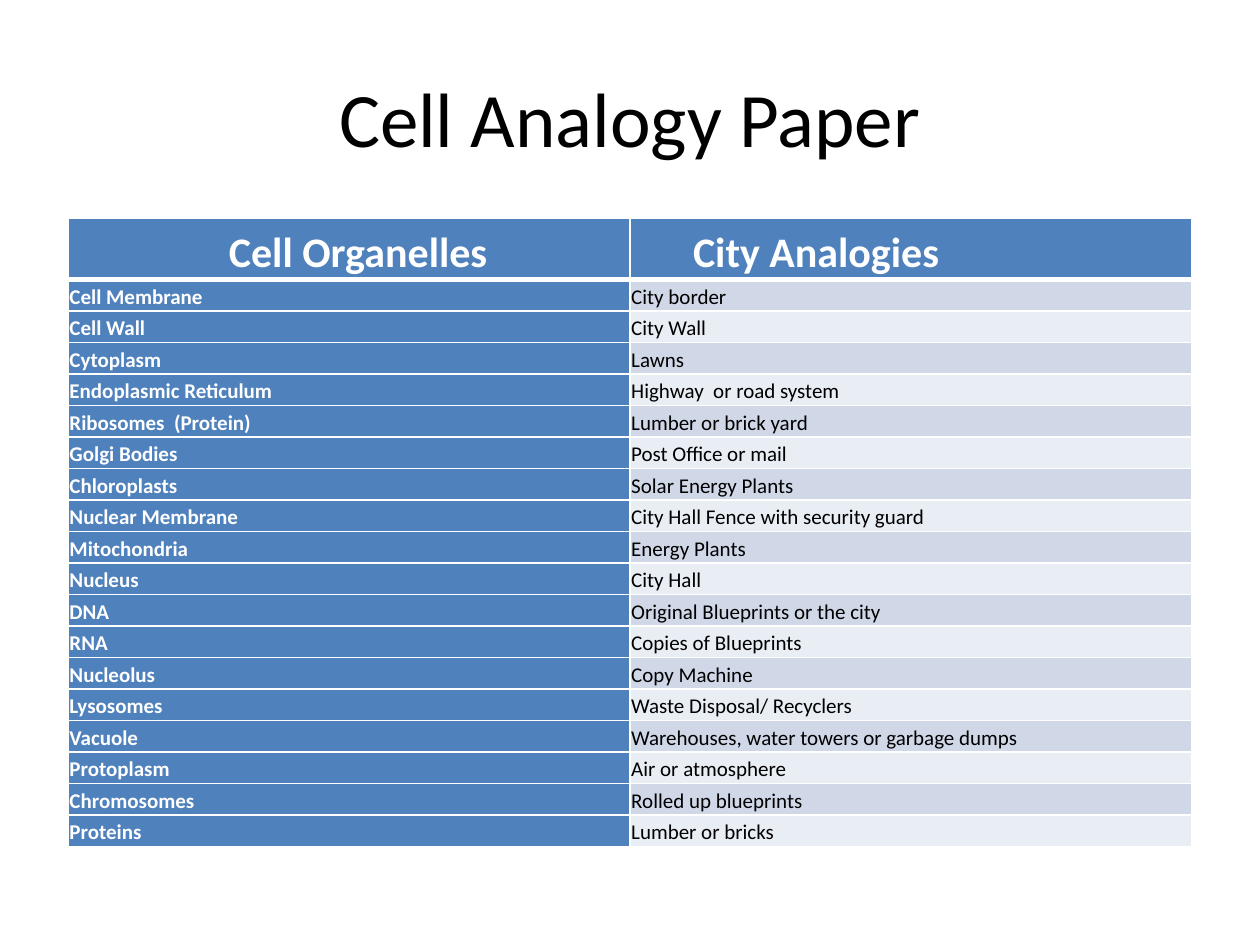
import dataclasses

import lxml.etree
import pptx
import pptx.dml.color
import pptx.enum.text
import pptx.oxml.ns
import pptx.util

Pt = pptx.util.Pt
Align = pptx.enum.text.PP_ALIGN
MIDDLE = pptx.enum.text.MSO_ANCHOR.MIDDLE


@dataclasses.dataclass(frozen=True)
class Theme:
    font: str = "Calibri"
    title_size: float = 44
    header_size: float = 24
    body_size: float = 12
    ink: str = "000000"
    paper: str = "FFFFFF"
    accent: str = "4F81BD"
    bands: tuple = ("D0D8E8", "E9EDF4")
    rule: float = 1
    heavy_rule: float = 3


HEADERS = [
    ("Cell Organelles", {"alignment": Align.CENTER, "space_after": Pt(10)}, 11),
    ("City Analogies", {"alignment": Align.LEFT}, 36),
]
ANALOGIES = [
    ("Cell Membrane", "City border"),
    ("Cell Wall", "City Wall"),
    ("Cytoplasm", "Lawns"),
    ("Endoplasmic Reticulum", "Highway  or road system"),
    ("Ribosomes  (Protein)", "Lumber or brick yard"),
    ("Golgi Bodies", "Post Office or mail"),
    ("Chloroplasts", "Solar Energy Plants"),
    ("Nuclear Membrane", "City Hall Fence with security guard"),
    ("Mitochondria", "Energy Plants"),
    ("Nucleus", "City Hall"),
    ("DNA", "Original Blueprints or the city"),
    ("RNA", "Copies of Blueprints"),
    ("Nucleolus", "Copy Machine"),
    ("Lysosomes", "Waste Disposal/ Recyclers"),
    ("Vacuole", "Warehouses, water towers or garbage dumps"),
    ("Protoplasm", "Air or atmosphere"),
    ("Chromosomes", "Rolled up blueprints"),
    ("Proteins", "Lumber or bricks"),
]


def apply(target, values):
    for name, value in values.items():
        setattr(target, name, value)


class Deck:
    def __init__(self, theme, width, height):
        self.theme = theme
        self.presentation = pptx.Presentation()
        apply(self.presentation, {"slide_width": Pt(width), "slide_height": Pt(height)})
        self.slide = self.presentation.slides.add_slide(self.presentation.slide_layouts[6])

    def label(self, paragraph, text, size, color, bold=False, **layout):
        apply(paragraph, layout)
        run = paragraph.add_run()
        run.text = text
        apply(run.font, {"name": self.theme.font, "size": Pt(size), "bold": bold})
        run.font.color.rgb = pptx.dml.color.RGBColor.from_string(color)

    def title(self, text, left, top, width, height):
        frame = self.slide.shapes.add_textbox(Pt(left), Pt(top), Pt(width), Pt(height)).text_frame
        apply(frame, {"word_wrap": True, "vertical_anchor": MIDDLE})
        self.label(frame.paragraphs[0], text, self.theme.title_size, self.theme.ink,
                   alignment=Align.CENTER)

    def borders(self, cell, top, bottom):
        rule = self.theme.rule
        widths = {"a:lnL": rule, "a:lnR": rule, "a:lnT": top, "a:lnB": bottom}
        properties = cell._tc.get_or_add_tcPr()
        qn = pptx.oxml.ns.qn
        for position, (tag, width) in enumerate(widths.items()):
            line = lxml.etree.Element(qn(tag), w=str(int(Pt(width))))
            fill = lxml.etree.SubElement(line, qn("a:solidFill"))
            lxml.etree.SubElement(fill, qn("a:srgbClr"), val=self.theme.paper)
            properties.insert(position, line)

    def cell(self, cell, text, fill, size, color, bold, inset=0.72, top=None, bottom=None, **layout):
        apply(cell, {"margin_left": Pt(inset), "margin_right": Pt(0.72),
                     "margin_top": Pt(0.72), "margin_bottom": Pt(0.72),
                     "vertical_anchor": MIDDLE})
        cell.fill.solid()
        cell.fill.fore_color.rgb = pptx.dml.color.RGBColor.from_string(fill)
        self.borders(cell, top or self.theme.rule, bottom or self.theme.rule)
        self.label(cell.text_frame.paragraphs[0], text, size, color, bold,
                   line_spacing=1.15, **layout)

    def table(self, headers, rows, left, top, width, header_height, row_height):
        theme = self.theme
        height = header_height + row_height * len(rows)
        table = self.slide.shapes.add_table(
            len(rows) + 1, len(headers), Pt(left), Pt(top), Pt(width), Pt(height)).table
        table.horz_banding = False
        for column in table.columns:
            column.width = Pt(width / len(headers))
        for index, row in enumerate(table.rows):
            row.height = Pt(row_height if index else header_height)
        for column, (text, layout, inset) in enumerate(headers):
            self.cell(table.cell(0, column), text, theme.accent, theme.header_size, theme.paper,
                      True, inset, bottom=theme.heavy_rule, **layout)
        for index, (organelle, analogy) in enumerate(rows):
            upper = theme.rule if index else theme.heavy_rule
            band = theme.bands[index % len(theme.bands)]
            self.cell(table.cell(index + 1, 0), organelle, theme.accent, theme.body_size,
                      theme.paper, True, top=upper)
            self.cell(table.cell(index + 1, 1), analogy, band, theme.body_size,
                      theme.ink, False, top=upper)


def main():
    deck = Deck(Theme(), 720, 540)
    deck.title("Cell Analogy Paper", 36, 21.6, 648, 90)
    deck.table(HEADERS, ANALOGIES, 39, 124.8, 642, 34.8, 18)
    deck.presentation.save("out.pptx")


if __name__ == "__main__":
    main()
